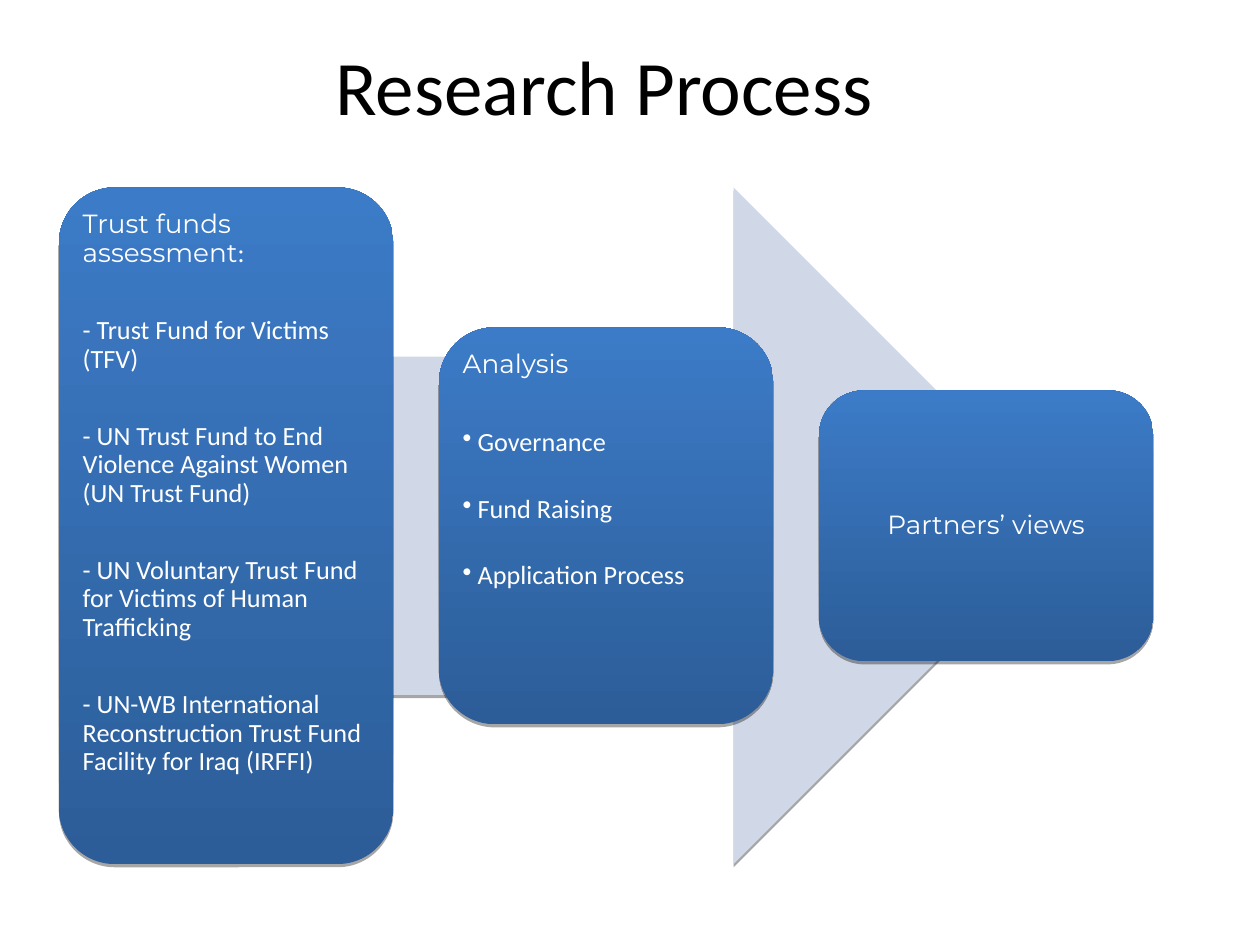
from lxml import etree
from pptx import Presentation
from pptx.dml import color
from pptx.enum import shapes, text
from pptx.oxml import ns
from pptx.util import Cm, Pt

TITLE = "Research Process"
HEAD, BODY = "Montserrat", "Calibri"
STAGES = [
    {
        "height": 13.64,
        "heading": [("Trust funds assessment", HEAD), (":", BODY)],
        "items": [
            "- Trust Fund for Victims (TFV)",
            "- UN Trust Fund to End Violence Against Women (UN Trust Fund)",
            "- UN Voluntary Trust Fund for Victims of Human Trafficking",
            "- UN-WB International Reconstruction Trust Fund Facility for Iraq (IRFFI)",
        ],
        "bulleted": False,
        "item_gap": 28,
    },
    {
        "height": 8,
        "heading": [("Analysis", HEAD)],
        "items": ["Governance", "Fund Raising", "Application Process"],
        "bulleted": True,
        "item_gap": 22,
    },
    {
        "height": 5.46,
        "heading": [("Partners’ views", HEAD)],
        "items": [],
    },
]
STAGE_LEFT, STAGE_WIDTH, STAGE_STEP = 1.19, 6.74, 7.66
MIDDLE = 10.6
ARROW_LEFT, ARROW_WIDTH, ARROW_HEIGHT = 2.84, 18.77, 13.64
HEADING_GAP = 28
INSET = 0.15


def rgb(value):
    return color.RGBColor.from_string(value)


def add_run(paragraph, words, font, size, hue):
    run = paragraph.add_run()
    run.text = words
    run.font.name = font
    run.font.size = Pt(size)
    run.font.color.rgb = rgb(hue)


def set_insets(frame, inset):
    frame.margin_left = frame.margin_right = Cm(inset)
    frame.margin_top = frame.margin_bottom = Cm(inset)
    frame.word_wrap = True


def add_block(slide, preset, left, width, height):
    block = slide.shapes.add_shape(
        preset, Cm(left), Cm(MIDDLE - height / 2), Cm(width), Cm(height))
    block.line.fill.background()
    block.shadow.inherit = False
    effects = block._element.spPr.find(ns.qn("a:effectLst"))
    shadow = etree.SubElement(effects, ns.qn("a:outerShdw"), blurRad="0",
                              dist=str(Pt(1.8)), dir="5400000", rotWithShape="0")
    hue = etree.SubElement(shadow, ns.qn("a:srgbClr"), val="000000")
    etree.SubElement(hue, ns.qn("a:alpha"), val="35000")
    return block


def add_bullet(paragraph):
    properties = paragraph._p.get_or_add_pPr()
    properties.set("marL", str(Cm(0.3)))
    properties.set("indent", str(-Cm(0.3)))
    etree.SubElement(properties, ns.qn("a:buChar"), char="•")


def add_stage(slide, index, stage):
    box = add_block(slide, shapes.MSO_SHAPE.ROUNDED_RECTANGLE,
                    STAGE_LEFT + index * STAGE_STEP, STAGE_WIDTH, stage["height"])
    box.fill.gradient()
    box.fill.gradient_angle = 90
    for stop, hue in zip(box.fill.gradient_stops, ("2C5D98", "3C7BC7")):
        stop.color.rgb = rgb(hue)

    items = stage["items"]
    frame = box.text_frame
    set_insets(frame, INSET)
    frame.vertical_anchor = text.MSO_ANCHOR.TOP if items else text.MSO_ANCHOR.MIDDLE
    heading = frame.paragraphs[0]
    heading.alignment = text.PP_ALIGN.LEFT if items else text.PP_ALIGN.CENTER
    heading.line_spacing = 0.9
    for words, font in stage["heading"]:
        add_run(heading, words, font, 15, "FFFFFF")

    for position, words in enumerate(items):
        item = frame.add_paragraph()
        item.alignment = text.PP_ALIGN.LEFT
        item.line_spacing = 0.9
        item.space_before = Pt(stage["item_gap"] if position else HEADING_GAP)
        if stage["bulleted"]:
            add_bullet(item)
        add_run(item, words, BODY, 15, "FFFFFF")


def main():
    deck = Presentation()
    deck.slide_width, deck.slide_height = Cm(25.4), Cm(19.05)
    slide = deck.slides.add_slide(deck.slide_layouts[6])

    title = slide.shapes.add_textbox(Cm(5.31), Cm(0.48), Cm(13.74), Cm(2.46)).text_frame
    title.word_wrap = True
    title.vertical_anchor = text.MSO_ANCHOR.MIDDLE
    title.paragraphs[0].alignment = text.PP_ALIGN.CENTER
    add_run(title.paragraphs[0], TITLE, BODY, 44, "000000")

    arrow = add_block(slide, shapes.MSO_SHAPE.RIGHT_ARROW,
                      ARROW_LEFT, ARROW_WIDTH, ARROW_HEIGHT)
    arrow.fill.solid()
    arrow.fill.fore_color.rgb = rgb("D0D8E8")

    for index, stage in enumerate(STAGES):
        add_stage(slide, index, stage)

    deck.save("out.pptx")


if __name__ == "__main__":
    main()
